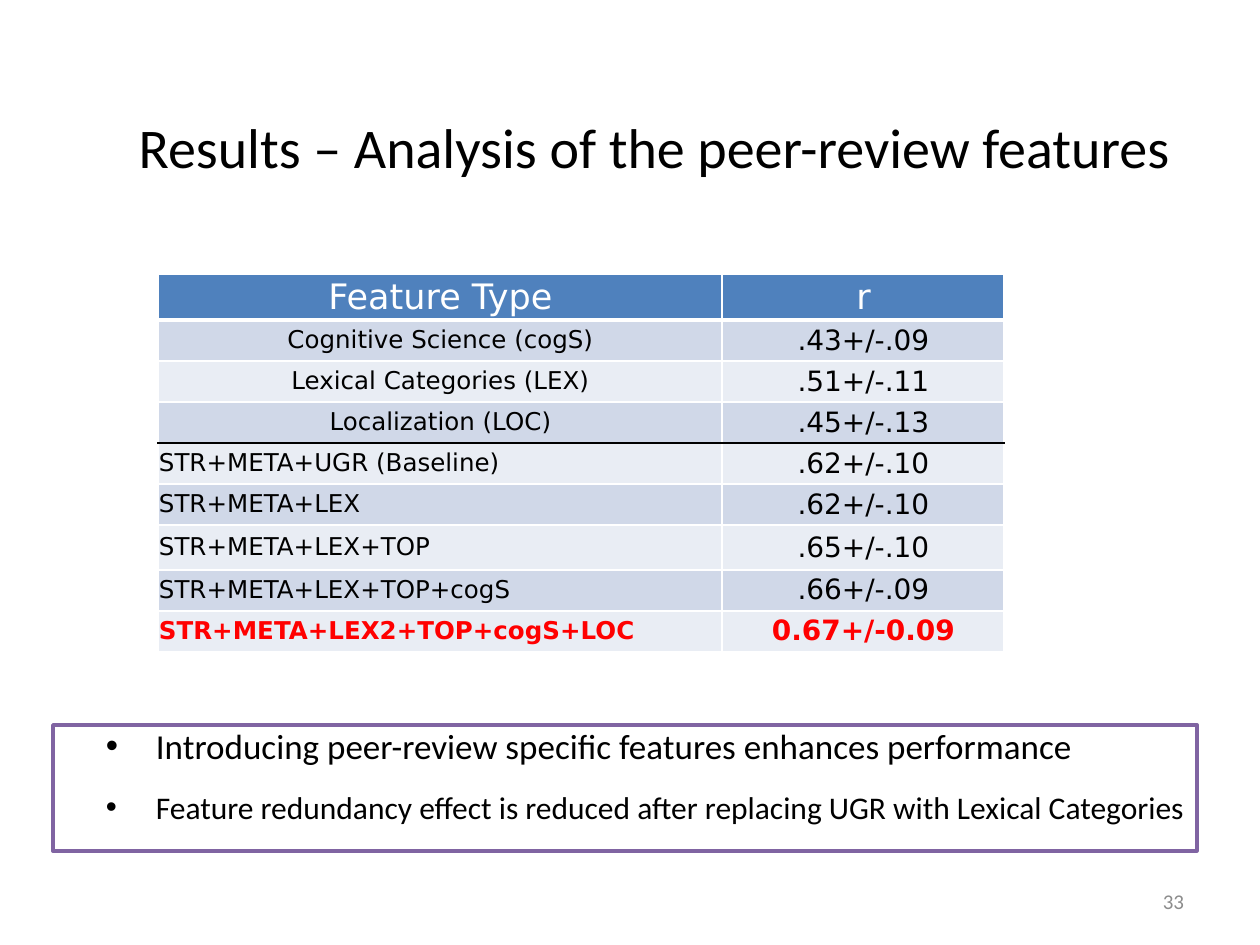
from lxml import etree
from pptx import Presentation
from pptx import util as u
from pptx.dml.color import RGBColor
from pptx.enum import shapes, text
from pptx.oxml.ns import qn

TITLE = "Results – Analysis of the peer-review features"
HEADER = ("Feature Type", "r")
SINGLE_FEATURES = [
    ("Cognitive Science (cogS)", ".43+/-.09"),
    ("Lexical Categories (LEX)", ".51+/-.11"),
    ("Localization (LOC)", ".45+/-.13"),
]
COMBINED_FEATURES = [
    ("STR+META+UGR (Baseline)", ".62+/-.10"),
    ("STR+META+LEX", ".62+/-.10"),
    ("STR+META+LEX+TOP", ".65+/-.10"),
    ("STR+META+LEX+TOP+cogS", ".66+/-.09"),
    ("STR+META+LEX2+TOP+cogS+LOC", "0.67+/-0.09"),
]
FINDINGS = [
    ("Introducing peer-review specific features enhances performance", 20),
    ("Feature redundancy effect is reduced after replacing UGR with Lexical Categories", 18),
]
PAGE_NUMBER = "33"

COLORS = {
    "white": "FFFFFF", "black": "000000", "grey": "8C8C8C", "red": "FF0000",
    "purple": "8064A2", "header": "4F81BD", "odd": "D0D8E8", "even": "E9EDF4",
}
TABLE_LEFT, TABLE_TOP = 158, 274
COLUMN_WIDTHS = (564, 282)
ROW_HEIGHTS = (46, 41, 41, 41, 41, 41, 45, 41, 41)


def px(length):
    return u.Emu(round(length * 914400 / 126))


def color(name):
    return RGBColor.from_string(COLORS[name])


def style(para, size, ink="black", font="Calibri", bold=False):
    for span in para.runs:
        span.font.size = u.Pt(size)
        span.font.name = font
        span.font.bold = bold
        span.font.color.rgb = color(ink)


def add_text(page, words, area, size, ink, align, insets):
    """Add a one-paragraph text box, centred vertically; insets are l, t, r, b."""
    frame = page.shapes.add_textbox(*map(px, area)).text_frame
    frame.word_wrap = True
    frame.vertical_anchor = text.MSO_ANCHOR.MIDDLE
    set_insets(frame, insets)
    frame.text = words
    frame.paragraphs[0].alignment = align
    style(frame.paragraphs[0], size, ink)


def set_insets(target, insets):
    (target.margin_left, target.margin_top,
     target.margin_right, target.margin_bottom) = map(px, insets)


def add_borders(cell, top, bottom):
    """Draw the four cell edges; top and bottom are (colour, points)."""
    props = cell._tc.get_or_add_tcPr()
    side = ("white", 1)
    for tag, (ink, width) in zip(("lnL", "lnR", "lnT", "lnB"), (side, side, top, bottom)):
        line = etree.SubElement(props, qn(f"a:{tag}"), w=str(u.Pt(width)))
        fill = etree.SubElement(line, qn("a:solidFill"))
        etree.SubElement(fill, qn("a:srgbClr"), val=COLORS[ink])


def add_results(page):
    rows = [HEADER, *SINGLE_FEATURES, *COMBINED_FEATURES]
    last, split = len(rows) - 1, len(SINGLE_FEATURES)
    # Rules between rows, keyed by the row above; every other edge is thin white.
    rules = {0: ("white", 3), split: ("black", 1)}
    frame = page.shapes.add_table(
        len(rows), len(HEADER), px(TABLE_LEFT), px(TABLE_TOP),
        px(sum(COLUMN_WIDTHS)), px(sum(ROW_HEIGHTS)))
    table = frame.table
    table.first_row = table.horz_banding = False
    for column, width in zip(table.columns, COLUMN_WIDTHS):
        column.width = px(width)
    for r, values in enumerate(rows):
        table.rows[r].height = px(ROW_HEIGHTS[r])
        band = "header" if r == 0 else "odd" if r % 2 else "even"
        ink = "white" if r == 0 else "red" if r == last else "black"
        for c, value in enumerate(values):
            cell = table.cell(r, c)
            add_borders(cell, rules.get(r - 1, ("white", 1)), rules.get(r, ("white", 1)))
            cell.fill.solid()
            cell.fill.fore_color.rgb = color(band)
            cell.vertical_anchor = text.MSO_ANCHOR.MIDDLE
            set_insets(cell, (0, 0, 0, 0))
            cell.text_frame.text = value
            para = cell.text_frame.paragraphs[0]
            para._p.get_or_add_pPr().set("marL", str(px(1)))
            left = r > split and c == 0
            para.alignment = text.PP_ALIGN.LEFT if left else text.PP_ALIGN.CENTER
            size = 20 if r == 0 else (14, 16)[c]
            style(para, size, ink, "DejaVu Sans", r == last)


def add_bullet(para):
    props = para._p.get_or_add_pPr()
    props.set("marL", str(px(103)))
    props.set("indent", str(px(-50)))
    bullet_color = etree.SubElement(props, qn("a:buClr"))
    etree.SubElement(bullet_color, qn("a:srgbClr"), val=COLORS["black"])
    etree.SubElement(props, qn("a:buFont"), typeface="Arial")
    etree.SubElement(props, qn("a:buChar"), char="•")


def add_findings(page):
    box = page.shapes.add_shape(
        shapes.MSO_SHAPE.RECTANGLE, *map(px, (53, 725, 1144, 126)))
    box.shadow.inherit = False
    box.fill.solid()
    box.fill.fore_color.rgb = color("white")
    box.line.color.rgb = color("purple")
    box.line.width = u.Pt(2)
    frame = box.text_frame
    frame.word_wrap = True
    frame.vertical_anchor = text.MSO_ANCHOR.TOP
    set_insets(frame, (0, 0, 5, 0))
    frame.text = "\n".join(words for words, _ in FINDINGS)
    for i, (para, (_, size)) in enumerate(zip(frame.paragraphs, FINDINGS)):
        add_bullet(para)
        para.alignment = text.PP_ALIGN.LEFT
        if i:
            para.space_before = u.Pt(12)
        style(para, size)


def main():
    deck = Presentation()
    deck.slide_width, deck.slide_height = px(1260), px(945)
    page = deck.slides.add_slide(deck.slide_layouts[6])
    add_findings(page)
    add_text(page, TITLE, (54, 42, 1206, 208), 32, "black",
             text.PP_ALIGN.CENTER, (13, 6, 18, 6))
    add_text(page, PAGE_NUMBER, (903, 876, 294, 50), 12, "grey",
             text.PP_ALIGN.RIGHT, (13, 6, 13, 6))
    add_results(page)
    deck.save("out.pptx")


if __name__ == "__main__":
    main()
